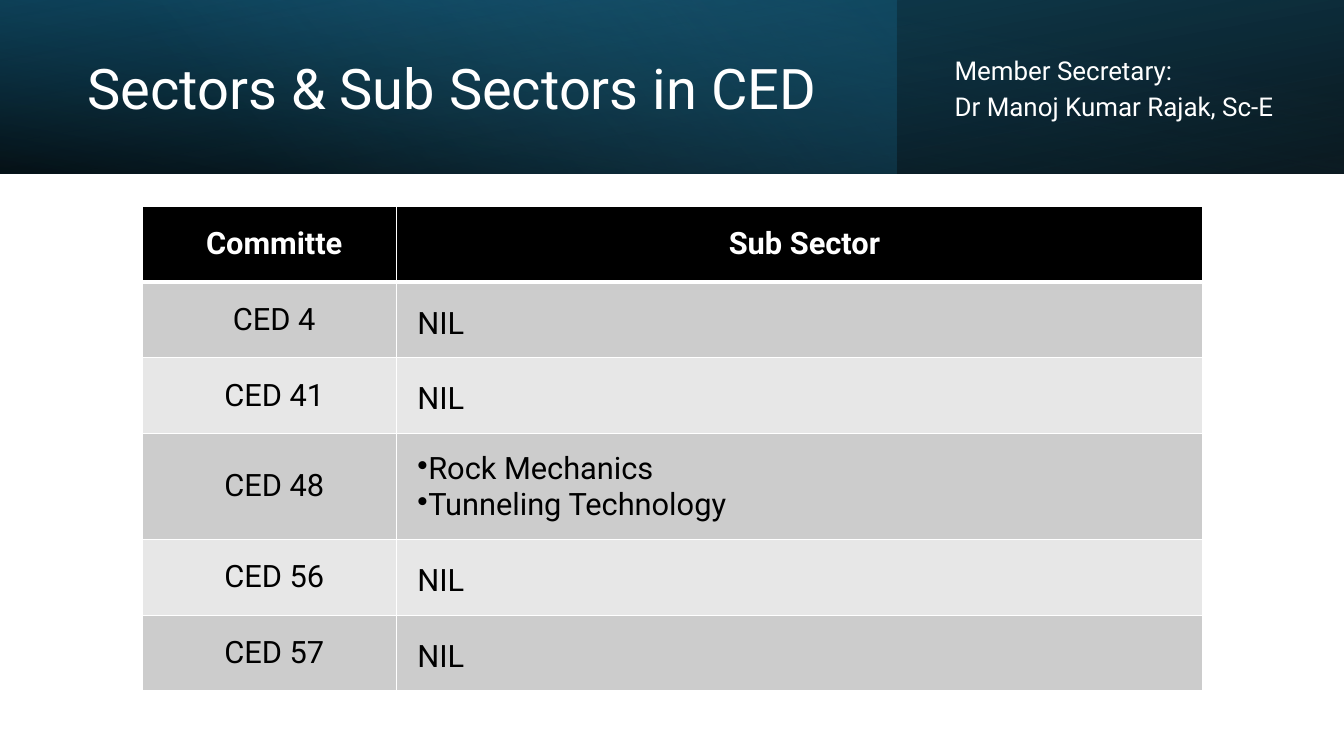
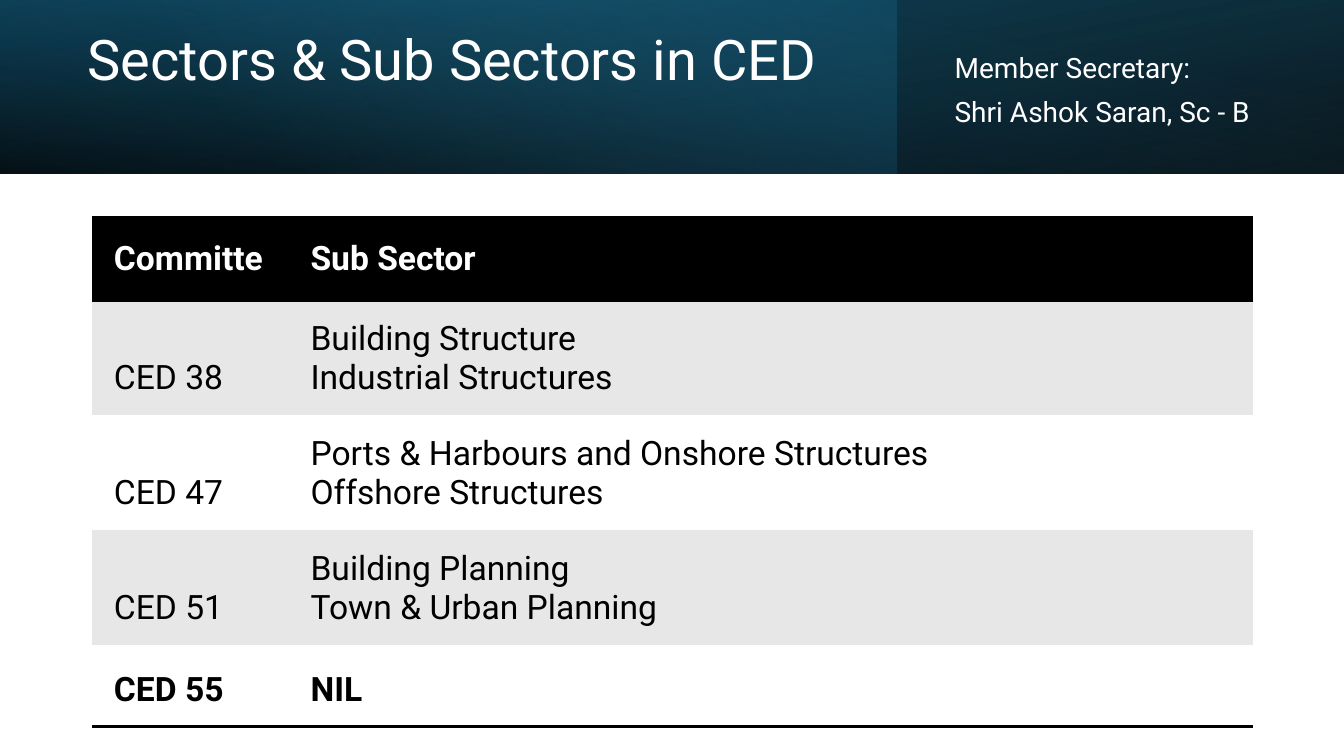
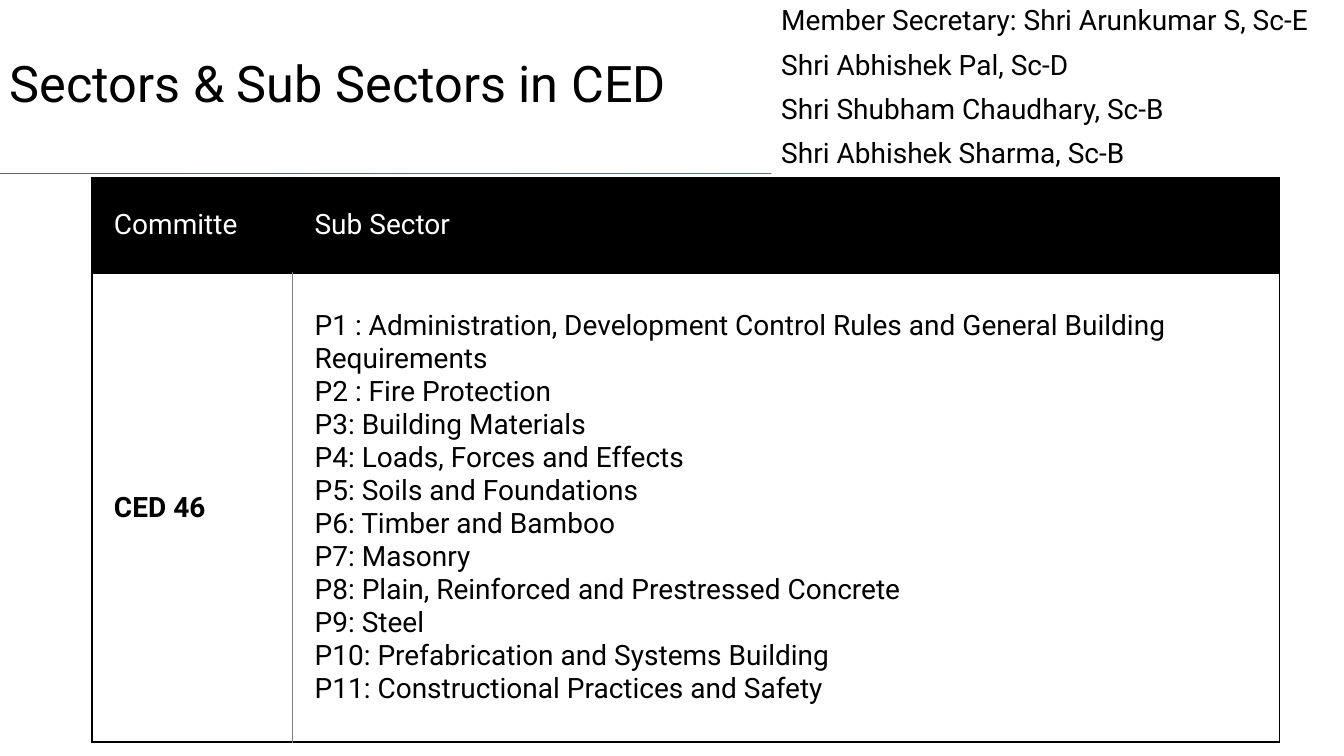
from lxml import etree
from pptx import Presentation
from pptx.dml.color import RGBColor
from pptx.enum.shapes import MSO_SHAPE
from pptx.enum.text import MSO_ANCHOR, PP_ALIGN
from pptx.oxml.ns import qn
from pptx.util import Inches, Pt

# Shared look
RECTANGLE = MSO_SHAPE.RECTANGLE
TOP, MIDDLE, BOTTOM = MSO_ANCHOR.TOP, MSO_ANCHOR.MIDDLE, MSO_ANCHOR.BOTTOM
LEFT, CENTER = PP_ALIGN.LEFT, PP_ALIGN.CENTER
FONT = "Roboto"
BLACK = RGBColor(0x00, 0x00, 0x00)
WHITE = RGBColor(0xFF, 0xFF, 0xFF)
DARK_GREY = RGBColor(0xCC, 0xCC, 0xCC)
LIGHT_GREY = RGBColor(0xE7, 0xE7, 0xE7)
RULE_GREY = RGBColor(0x80, 0x80, 0x80)
DEEP_TEAL = RGBColor(0x10, 0x48, 0x62)
TEAL = RGBColor(0x15, 0x60, 0x82)
SKY = RGBColor(0x46, 0xB1, 0xE1)
PLAIN_TABLE_STYLE = "{2D5ABB26-0587-4C30-8999-92F81FD0307C}"

# Places as percent of the slide: left, top, width, height
WIDTH, HEIGHT = Inches(13.33), Inches(7.5)
BAND_HEIGHT = 22.93
TITLE_PLACE = (5.78, 3.6, 57.92, 16.93)
SECRETARY_PLACE = (70.29, 5.73, 26.56, 12.8)
TITLE = "Sectors & Sub Sectors in CED"
HEADINGS = ("Committe", ["Sub Sector"])


def across(percent):
    return round(WIDTH * percent / 100)


def down(percent):
    return round(HEIGHT * percent / 100)


def place(left, top, width, height):
    return across(left), down(top), across(width), down(height)


def add_color(parent, color, opacity=100):
    node = etree.SubElement(parent, qn("a:srgbClr"), val=str(color))
    if opacity < 100:
        etree.SubElement(node, qn("a:alpha"), val=str(opacity * 1000))


def add_gradient(slide, width, angle, stops, flipped=False, rotation=0):
    """Draw one translucent layer of the title band."""
    layer = slide.shapes.add_shape(RECTANGLE, *place(0, 0, width, BAND_HEIGHT))
    layer.shadow.inherit = False
    layer.line.fill.background()
    layer.rotation = rotation
    properties = layer.element.spPr
    if flipped:
        properties.find(qn("a:xfrm")).set("flipH", "1")
    layer.fill.background()
    gradient = etree.Element(qn("a:gradFill"), rotWithShape="1")
    stop_list = etree.SubElement(gradient, qn("a:gsLst"))
    for position, color, opacity in stops:
        stop = etree.SubElement(stop_list, qn("a:gs"), pos=str(position * 1000))
        add_color(stop, color, opacity)
    etree.SubElement(gradient, qn("a:lin"), ang=str(angle * 60000), scaled="0")
    properties.replace(properties.find(qn("a:noFill")), gradient)


def add_band(slide):
    add_gradient(slide, 100, 100, [(0, BLACK, 96), (100, DEEP_TEAL, 100)],
                 flipped=True, rotation=180)
    add_gradient(slide, 66.69, 140, [(0, TEAL, 41), (74, SKY, 0)])
    add_gradient(slide, 100, 260, [(0, BLACK, 63), (78, TEAL, 15)], flipped=True)


def write_lines(frame, lines, size, color, bold=False, align=LEFT,
                spacing=None, before=0, bulleted=False):
    for index, line in enumerate(lines):
        para = frame.add_paragraph() if index else frame.paragraphs[0]
        para.alignment = align
        para.space_before = Pt(before)
        if spacing:
            para.line_spacing = spacing
        if bulleted:
            etree.SubElement(para._p.get_or_add_pPr(), qn("a:buChar"), char="•")
        span = para.add_run()
        span.text = line
        span.font.name = FONT
        span.font.size = Pt(size)
        span.font.bold = bold
        span.font.color.rgb = color


def add_text(slide, area, lines, size, color=WHITE, anchor=MIDDLE,
             spacing=0.9, before=0, fill=None):
    box = slide.shapes.add_textbox(*place(*area))
    if fill is not None:
        box.fill.solid()
        box.fill.fore_color.rgb = fill
    frame = box.text_frame
    frame.word_wrap = True
    frame.vertical_anchor = anchor
    write_lines(frame, lines, size, color, spacing=spacing, before=before)


def set_borders(cell, borders):
    """Draw the sides named in borders (L, R, T, B) and hide the others."""
    properties = cell._tc.get_or_add_tcPr()
    for side in "LRTB":
        color, points = borders.get(side, (None, 0))
        line = etree.SubElement(properties, qn("a:ln" + side), w=str(Pt(points)))
        if color is None:
            etree.SubElement(line, qn("a:noFill"))
        else:
            add_color(etree.SubElement(line, qn("a:solidFill")), color)


def add_table(slide, left, top, columns, heights, rows, size, insets, fills,
              borders, anchors, header_bold=True, key_align=LEFT,
              bold_cells=()):
    """Build a committee table; fills repeat down the body rows."""
    area = place(left, top, sum(columns), sum(heights))
    table = slide.shapes.add_table(len(rows) + 1, 2, *area).table
    table._tbl.tblPr.find(qn("a:tableStyleId")).text = PLAIN_TABLE_STYLE
    for column, width in zip(table.columns, columns):
        column.width = across(width)
    for row, height in zip(table.rows, heights):
        row.height = down(height)
    side_inset, end_inset, right_inset = insets
    for row, (key, sectors) in enumerate([HEADINGS, *rows]):
        header = row == 0
        for column, lines in enumerate(([key], sectors)):
            cell = table.cell(row, column)
            cell.margin_left, cell.margin_right = Inches(side_inset), Inches(right_inset)
            cell.margin_top = cell.margin_bottom = Inches(end_inset)
            cell.vertical_anchor = MIDDLE if header else anchors[column]
            set_borders(cell, borders(row, column))
            cell.fill.solid()
            cell.fill.fore_color.rgb = BLACK if header else fills[(row - 1) % len(fills)]
            centered = header or column == 0
            write_lines(cell.text_frame, lines, size, WHITE if header else BLACK,
                        bold=header_bold if header else (row, column) in bold_cells,
                        align=key_align if centered else LEFT,
                        bulleted=column == 1 and key_align == CENTER and len(lines) > 1)


# Border rules, one per table
def white_grid(row, column):
    thin, thick = (WHITE, 1), (WHITE, 3)
    return {"L": thin, "R": thin, "T": thick if row == 1 else thin,
            "B": thin if row else thick}


def open_rules(row, column):
    rule = (BLACK, 2)
    return {0: {"T": rule, "B": rule}, 1: {"T": rule}, 4: {"B": rule}}.get(row, {})


def framed(row, column):
    frame, divider = (BLACK, 1.5), (RULE_GREY, 0.5)
    borders = {side: frame for side in "LRTB"}
    if row:
        borders["L" if column else "R"] = divider
    return borders


def build_geology(slide):
    add_band(slide)
    add_text(slide, TITLE_PLACE, [TITLE], 40)
    add_text(slide, SECRETARY_PLACE,
             ["Member Secretary:", "Dr Manoj Kumar Rajak, Sc-E"],
             18.5, spacing=0.7, before=10)
    rows = [("CED 4", ["NIL"]), ("CED 41", ["NIL"]),
            ("CED 48", ["Rock Mechanics", "Tunneling Technology"]),
            ("CED 56", ["NIL"]), ("CED 57", ["NIL"])]
    add_table(slide, 10.58, 27.33, (18.9, 60), (10, 10, 10, 13.73, 10, 10), rows,
              22, (0.21, 0.16, 0.11), (DARK_GREY, LIGHT_GREY), white_grid,
              (MIDDLE, BOTTOM), key_align=CENTER)


def build_structures(slide):
    add_band(slide)
    add_text(slide, TITLE_PLACE, [TITLE], 40, anchor=TOP)
    add_text(slide, SECRETARY_PLACE,
             ["Member Secretary:", "Shri Ashok Saran, Sc - B"], 20, before=10)
    rows = [("CED 38", ["Building Structure", "Industrial Structures"]),
            ("CED 47", ["Ports & Harbours and Onshore Structures",
                        "Offshore Structures"]),
            ("CED 51", ["Building Planning", "Town & Urban Planning"]),
            ("CED 55", ["NIL"])]
    add_table(slide, 6.83, 28.67, (14.63, 71.79), (11.07, 15, 15, 15, 10.8), rows,
              24, (0.22, 0.17, 0.08), (LIGHT_GREY, WHITE), open_rules,
              (BOTTOM, BOTTOM), bold_cells=((4, 0), (4, 1)))


def build_building_code(slide):
    add_band(slide)
    add_text(slide, (0, 0, 59.11, BAND_HEIGHT), [TITLE], 36, BLACK, fill=WHITE)
    parts = ["P1 : Administration, Development Control Rules and General "
             "Building Requirements",
             "P2 : Fire Protection",
             "P3: Building Materials",
             "P4: Loads, Forces and Effects",
             "P5: Soils and Foundations",
             "P6: Timber and Bamboo",
             "P7: Masonry",
             "P8: Plain, Reinforced and Prestressed Concrete",
             "P9: Steel",
             "P10: Prefabrication and Systems Building",
             "P11: Constructional Practices and Safety"]
    add_table(slide, 6.83, 23.47, (14.93, 73.44), (12.67, 62), [("CED 46", parts)],
              20, (0.22, 0.17, 0.08), (WHITE,), framed, (MIDDLE, MIDDLE),
              header_bold=False, bold_cells=((1, 0),))
    add_text(slide, (57.39, 0, 42.61, 23.33),
             ["Member Secretary: Shri Arunkumar S, Sc-E", "Shri Abhishek Pal, Sc-D",
              "Shri Shubham Chaudhary, Sc-B", "Shri Abhishek Sharma, Sc-B"],
             20, BLACK, before=10, fill=WHITE)


def main():
    deck = Presentation()
    deck.slide_width, deck.slide_height = WIDTH, HEIGHT
    for build in (build_geology, build_structures, build_building_code):
        build(deck.slides.add_slide(deck.slide_layouts[6]))
    deck.save("out.pptx")


if __name__ == "__main__":
    main()
